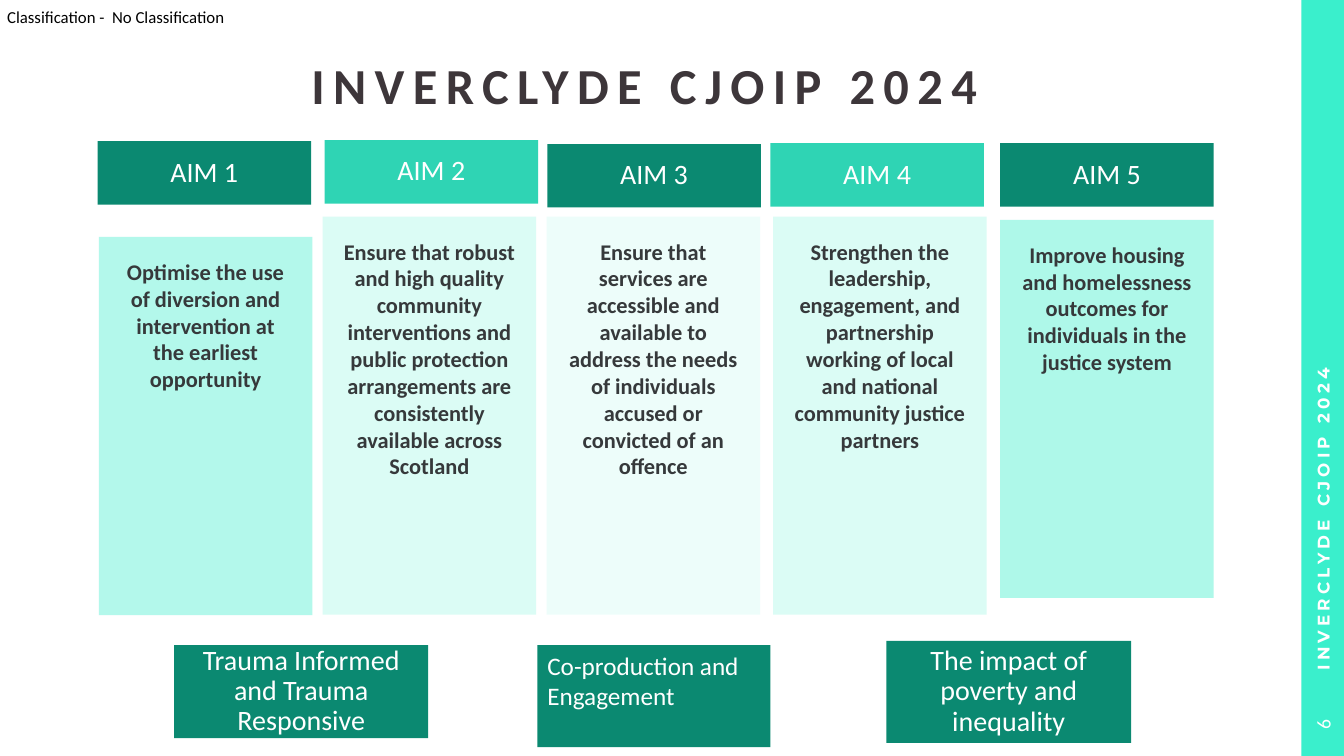
import dataclasses

import pptx
import pptx.dml.color
import pptx.enum.shapes
import pptx.enum.text
import pptx.oxml.ns
import pptx.util
from lxml import etree

Cm = pptx.util.Cm
ALIGN = pptx.enum.text.PP_ALIGN
ANCHOR = pptx.enum.text.MSO_ANCHOR
qn = pptx.oxml.ns.qn


@dataclasses.dataclass(frozen=True)
class Theme:
    dark: str = "0B8971"
    bright: str = "11CEA9"
    mint: str = "89F5E0"
    pale: str = "B0F9EB"
    palest: str = "D8FCF5"
    band: str = "3AEFCC"
    white: str = "FFFFFF"
    black: str = "000000"
    heading: str = "3D363A"
    body: str = "36393B"
    font: str = "Calibri"
    band_font: str = "Montserrat"
    title_size: int = 36
    label_size: int = 20
    theme_size: int = 18
    body_size: int = 16
    number_size: int = 14
    small_size: int = 12


THEME = Theme()
DECK_NAME = "INVERCLYDE CJOIP 2024"
COLUMN_WIDTH, HEADER_HEIGHT = 5.38, 1.6

# Per aim: header left, top, colour, opacity; panel left, top, height, colour, opacity; text
AIMS = [
    ((2.46, 3.56, THEME.dark, 100), (2.49, 5.97, 9.53, THEME.mint, 64),
     "Optimise the use of diversion and intervention at the earliest opportunity"),
    ((8.18, 3.53, THEME.bright, 87), (8.13, 5.46, 10.03, THEME.pale, 45),
     "Ensure that robust and high quality community interventions and public "
     "protection arrangements are consistently available across Scotland"),
    ((13.79, 3.63, THEME.dark, 100), (13.77, 5.46, 10.03, THEME.palest, 44),
     "Ensure that services are accessible and available to address the needs of "
     "individuals accused or convicted of an offence"),
    ((19.41, 3.61, THEME.bright, 87), (19.48, 5.46, 10.03, THEME.pale, 45),
     "Strengthen the leadership, engagement, and partnership working of local and "
     "national community justice partners"),
    ((25.2, 3.61, THEME.dark, 100), (25.2, 5.54, 9.53, THEME.mint, 68),
     "Improve housing and homelessness outcomes for individuals in the justice system"),
]


def apply(target, values):
    for name, value in values.items():
        setattr(target, name, value)


def write(shape, text, size, color, bold=False, font=THEME.font, align=ALIGN.CENTER,
          anchor=ANCHOR.MIDDLE, insets=(0, 0, 0, 0), line_spacing=1.0, tracking=0):
    """Fill a shape with one formatted paragraph; insets are left, top, right, bottom."""
    frame = shape.text_frame
    left, top, right, bottom = map(Cm, insets)
    apply(frame, {"word_wrap": True, "auto_size": pptx.enum.text.MSO_AUTO_SIZE.NONE,
                  "vertical_anchor": anchor, "margin_left": left, "margin_top": top,
                  "margin_right": right, "margin_bottom": bottom})
    paragraph = frame.paragraphs[0]
    apply(paragraph, {"alignment": align, "line_spacing": line_spacing})
    run = paragraph.add_run()
    run.text = text
    apply(run.font, {"name": font, "size": pptx.util.Pt(size), "bold": bold})
    run.font.color.rgb = pptx.dml.color.RGBColor.from_string(color)
    if tracking:
        run.font._element.set("spc", str(tracking * 100))


def add_block(slide, box, color, opacity=100):
    block = slide.shapes.add_shape(pptx.enum.shapes.MSO_SHAPE.RECTANGLE, *map(Cm, box))
    block.shadow.inherit = False
    block.line.fill.background()
    block.fill.solid()
    block.fill.fore_color.rgb = pptx.dml.color.RGBColor.from_string(color)
    if opacity < 100:
        tint = block._element.spPr.find(qn("a:solidFill")).find(qn("a:srgbClr"))
        etree.SubElement(tint, qn("a:alpha")).set("val", str(opacity * 1000))
    return block


def add_label(slide, box, text, color, opacity=100):
    write(add_block(slide, box, color, opacity), text, THEME.label_size, THEME.white,
          insets=(0.43,) * 4, line_spacing=0.9)


def add_text(slide, box, text, size, color, rotation=0, **style):
    caption = slide.shapes.add_textbox(*map(Cm, box))
    caption.rotation = rotation
    write(caption, text, size, color, **style)


def add_aim(slide, number, header, panel, text):
    left, top, color, opacity = header
    add_label(slide, (left, top, COLUMN_WIDTH, HEADER_HEIGHT), f"AIM {number}", color, opacity)
    left, top, height, color, opacity = panel
    write(add_block(slide, (left, top, COLUMN_WIDTH, height), color, opacity), text,
          THEME.body_size, THEME.body, bold=True, anchor=ANCHOR.TOP, insets=(0.53,) * 4)


def add_title(slide):
    title = slide.shapes.title
    apply(title, {"left": Cm(2.18), "top": Cm(1.32), "width": Cm(28.12), "height": Cm(1.8)})
    write(title, DECK_NAME, THEME.title_size, THEME.heading, bold=True,
          line_spacing=0.9, tracking=6)


def add_side_band(slide):
    add_block(slide, (32.79, 0, 1.07, 19.05), THEME.band)
    add_text(slide, (24.59, 8.2, 17.48, 1.07), DECK_NAME, THEME.small_size, THEME.white,
             rotation=270, bold=True, font=THEME.band_font, align=ALIGN.LEFT,
             insets=(0.58, 0.13, 0.25, 0.13), tracking=3)
    add_text(slide, (32.54, 17.73, 1.57, 1.07), "6", THEME.number_size, THEME.white,
             rotation=270, insets=(0.25, 0.13, 0.25, 0.13))


def add_themes(slide):
    add_label(slide, (4.39, 16.26, 6.4, 2.34), "Trauma Informed and Trauma Responsive",
              THEME.dark)
    write(add_block(slide, (13.54, 16.26, 5.87, 2.57), THEME.dark),
          "Co-production and Engagement", THEME.theme_size, THEME.white,
          align=ALIGN.LEFT, anchor=ANCHOR.TOP, insets=(0.25, 0.13, 0.25, 0.13))
    add_label(slide, (22.33, 16.15, 6.17, 2.57), "The impact of poverty and inequality",
              THEME.dark)


def main():
    deck = pptx.Presentation()
    apply(deck, {"slide_width": Cm(33.86), "slide_height": Cm(19.05)})
    slide = deck.slides.add_slide(deck.slide_layouts[5])

    # Heading, classification and side band
    add_title(slide)
    add_text(slide, (0.18, 0.18, 5.8, 0.51), "Classification -  No Classification",
             THEME.small_size, THEME.black, align=ALIGN.LEFT, anchor=ANCHOR.TOP)
    add_side_band(slide)

    # Five aims, then the themes that run across them
    for number, (header, panel, text) in enumerate(AIMS, start=1):
        add_aim(slide, number, header, panel, text)
    add_themes(slide)

    deck.save("out.pptx")


if __name__ == "__main__":
    main()
